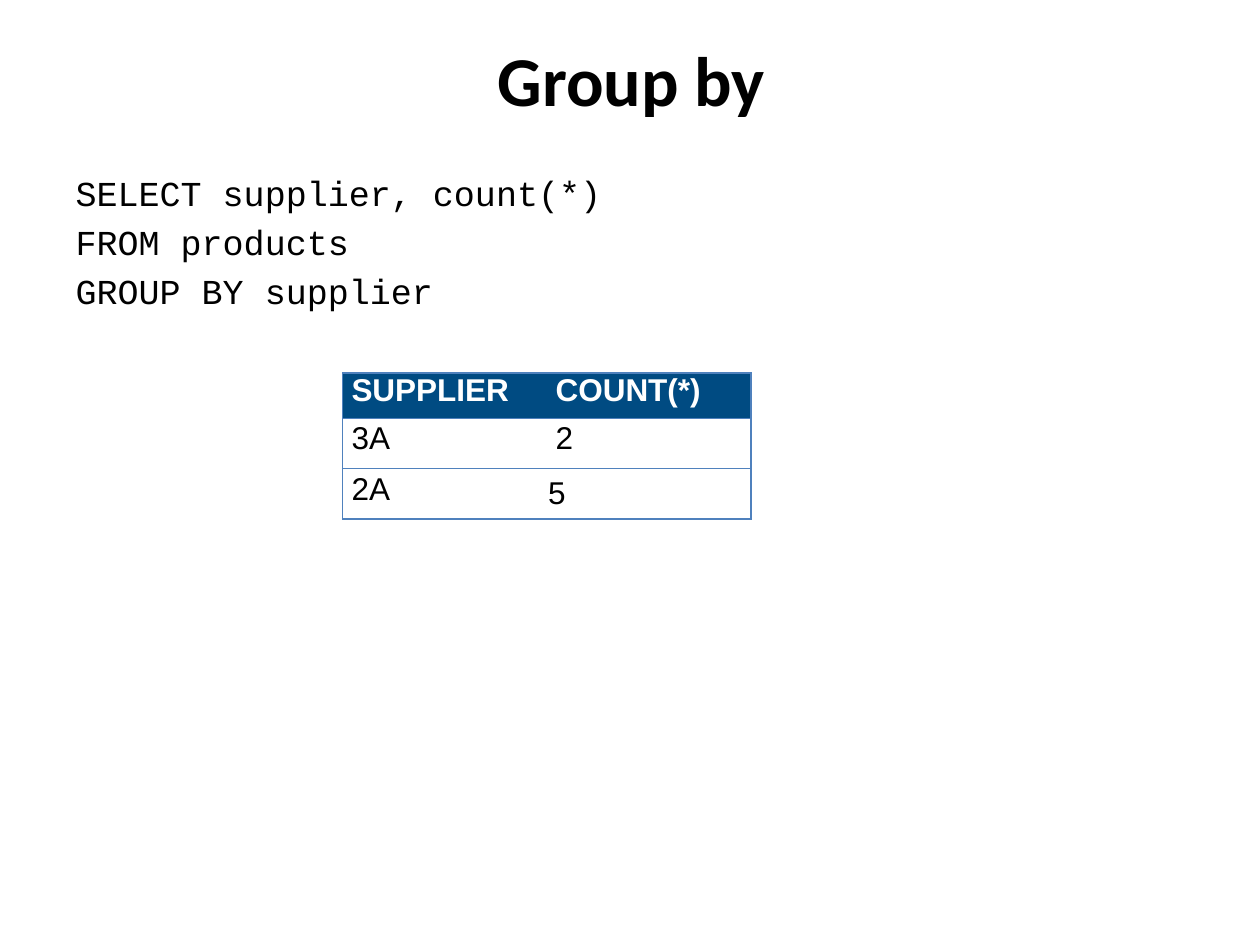
import pptx
import pptx.dml.color
import pptx.enum.text
import pptx.oxml.ns
import pptx.util
from lxml import etree

Inches = pptx.util.Inches
Pt = pptx.util.Pt
RGBColor = pptx.dml.color.RGBColor
qn = pptx.oxml.ns.qn

BLACK = RGBColor(0, 0, 0)
WHITE = RGBColor(255, 255, 255)
NAVY = RGBColor(0x00, 0x4B, 0x82)
BLUE = RGBColor(0x4F, 0x81, 0xBD)
NO_GRID_STYLE = "{2D5ABB26-0587-4C30-8999-92F81FD0307C}"

QUERY = ["SELECT supplier, count(*)", "FROM products", "GROUP BY supplier"]
RESULT = [["SUPPLIER", "COUNT(*)"], ["3A", "2"], ["2A", "5"]]


def format_runs(p, font, size, color, bold=False):
    for r in p.runs:
        r.font.name = font
        r.font.size = Pt(size)
        r.font.bold = bold
        r.font.color.rgb = color


def place(sp, left, top, width, height):
    sp.left, sp.top = Inches(left), Inches(top)
    sp.width, sp.height = Inches(width), Inches(height)


def fill_title(sp, text):
    place(sp, 0.51, 0.13, 9, 0.99)
    tf = sp.text_frame
    tf.text = text
    tf.vertical_anchor = pptx.enum.text.MSO_ANCHOR.MIDDLE
    p = tf.paragraphs[0]
    p.alignment = pptx.enum.text.PP_ALIGN.CENTER
    format_runs(p, "Calibri", 40, BLACK, True)


def fill_query(sp, lines):
    place(sp, 0.5, 1.31, 9, 5.51)
    tf = sp.text_frame
    tf.text = "\n".join(lines)
    for p in tf.paragraphs:
        format_runs(p, "Courier New", 20, BLACK)
        pPr = p._p.get_or_add_pPr()
        pPr.set("marL", "0")
        pPr.set("indent", "0")
        etree.SubElement(pPr, qn("a:buNone"))


def set_borders(cell, sides):
    tcPr = cell._tc.get_or_add_tcPr()
    for i, side in enumerate(sides):
        ln = etree.Element(qn(f"a:ln{side}"), w=str(Pt(1)))
        fill = etree.SubElement(ln, qn("a:solidFill"))
        etree.SubElement(fill, qn("a:srgbClr"), val=str(BLUE))
        tcPr.insert(i, ln)


def fill_cell(cell, text, header, line_spacing):
    cell.text = text
    cell.vertical_anchor = pptx.enum.text.MSO_ANCHOR.MIDDLE
    cell.margin_left = cell.margin_right = Inches(0.01)
    cell.margin_top = cell.margin_bottom = 0
    cell.fill.solid()
    cell.fill.fore_color.rgb = NAVY if header else WHITE
    p = cell.text_frame.paragraphs[0]
    format_runs(p, "Arial", 18, WHITE if header else BLACK, header)
    if line_spacing:
        p.line_spacing = Pt(line_spacing)
        p._p.get_or_add_pPr().set("marL", str(Inches(0.06)))


def add_result_table(s, rows):
    heights = [0.36, 0.4, 0.4]
    frame = s.shapes.add_table(len(rows), len(rows[0]), Inches(2.72), Inches(2.96),
                               Inches(3.24), Inches(sum(heights)))
    table = frame.table
    table.first_row = table.horz_banding = False
    table._tbl.tblPr.find(qn("a:tableStyleId")).text = NO_GRID_STYLE
    for i, (row, height) in enumerate(zip(rows, heights)):
        table.rows[i].height = Inches(height)
        for j, text in enumerate(row):
            cell = table.cell(i, j)
            spacing = None if text == "5" else 14.5 if i == 0 else 15
            fill_cell(cell, text, i == 0, spacing)
            set_borders(cell, "LTB" if j == 0 else "RTB")


def main():
    prs = pptx.Presentation()
    prs.slide_width, prs.slide_height = Inches(10), Inches(7.5)
    s = prs.slides.add_slide(prs.slide_layouts[1])
    fill_title(s.shapes.title, "Group by")
    fill_query(s.placeholders[1], QUERY)
    add_result_table(s, RESULT)
    prs.save("out.pptx")


if __name__ == "__main__":
    main()
